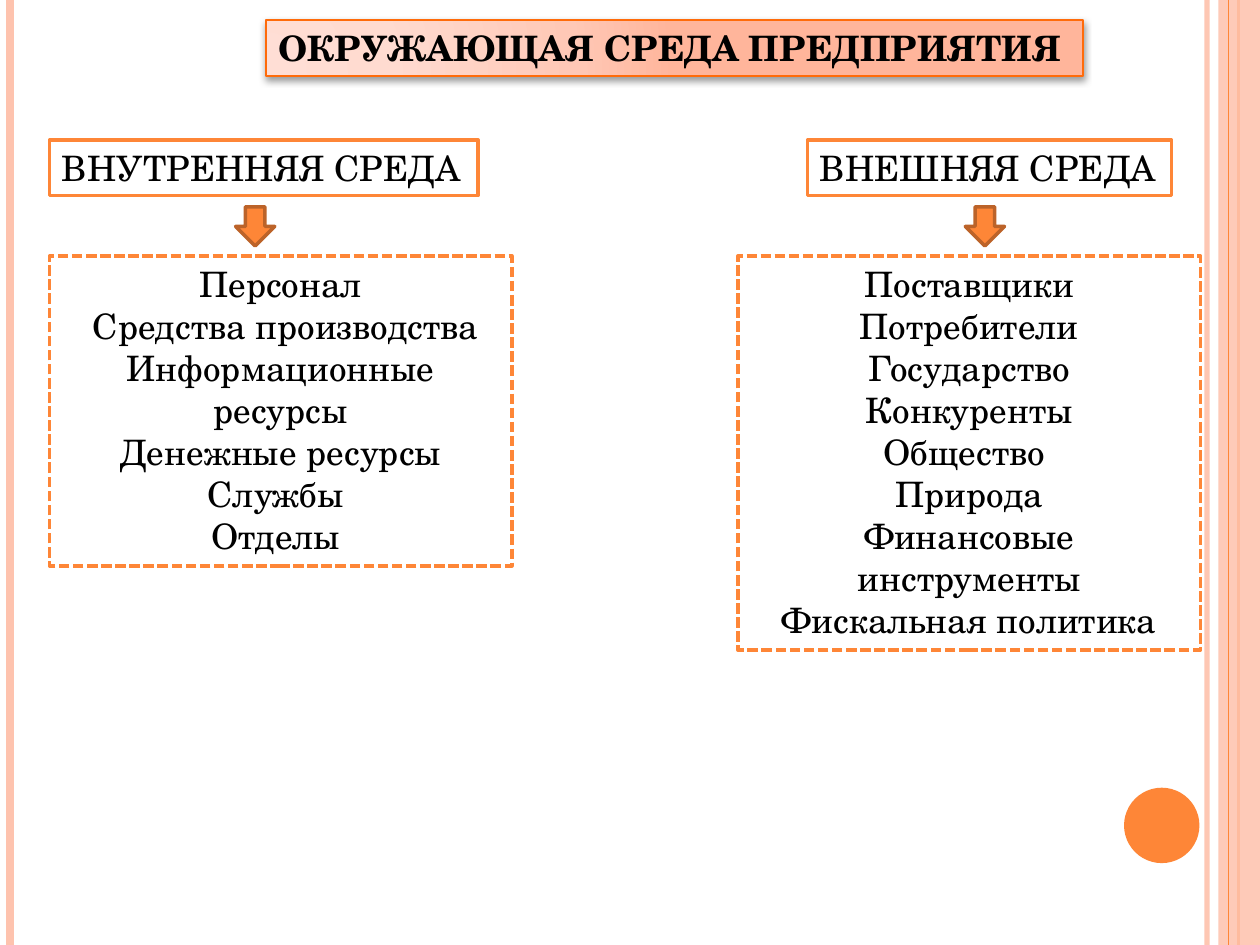
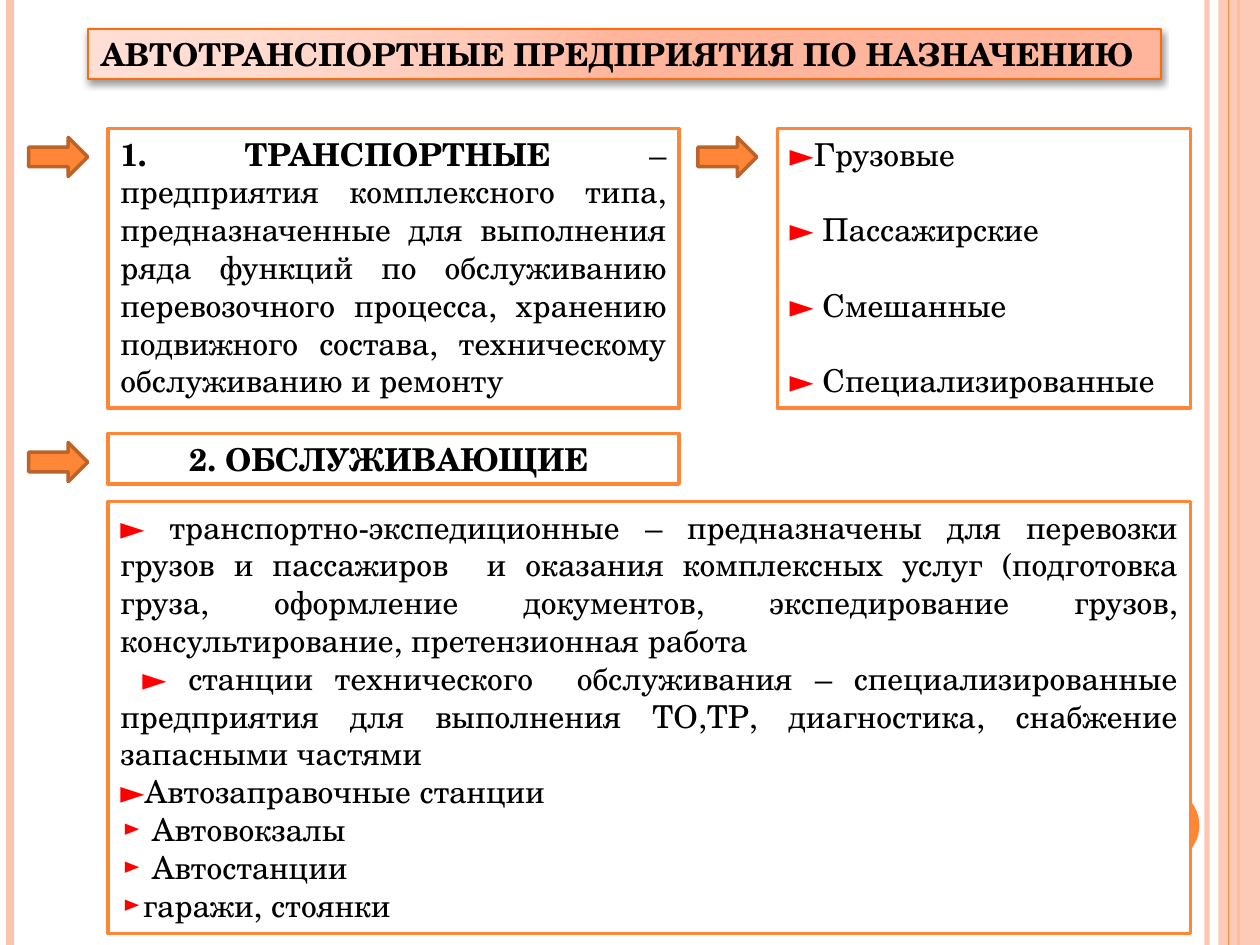
from dataclasses import dataclass

from lxml.etree import SubElement
from pptx import Presentation
from pptx.dml.color import RGBColor
from pptx.enum.dml import MSO_LINE
from pptx.enum.shapes import MSO_CONNECTOR, MSO_SHAPE
from pptx.enum.text import MSO_ANCHOR, MSO_AUTO_SIZE, PP_ALIGN
from pptx.oxml import parse_xml
from pptx.oxml.ns import nsdecls, qn
from pptx.util import Cm, Pt

SLIDE_WIDTH, SLIDE_HEIGHT = 25.4, 19.05


@dataclass(frozen=True)
class Theme:
    # Colours
    accent: str = "FE8637"
    accent_dark: str = "BC6329"
    band: str = "FEC3AE"
    title_line: str = "FF6B0A"
    title_stops: tuple = ((0, "FFDED5"), (30, "FFDBD0"), (75, "FFC8B6"), (100, "FFB59B"))
    paper: str = "FFFFFF"
    ink: str = "000000"
    marker: str = "FF0000"
    # Type
    font: str = "TeX Gyre Schola"
    marker_font: str = "Quicksand"
    large: int = 20
    normal: int = 18
    # Line widths
    outline: float = 2


def rgb(value):
    return RGBColor.from_string(value)


def set_opacity(properties, percent):
    for colour in properties.iter(qn("a:srgbClr")):
        SubElement(colour, qn("a:alpha"), val=str(percent * 1000))


class Deck:
    """Holds the theme and the current slide."""

    def __init__(self, theme):
        self.theme = theme
        self.slide = None
        self.presentation = Presentation()
        self.presentation.slide_width = Cm(SLIDE_WIDTH)
        self.presentation.slide_height = Cm(SLIDE_HEIGHT)

    # Slide with its side bands and title
    def new_slide(self, title, place, size):
        layout = self.presentation.slide_layouts.get_by_name("Title Only")
        self.slide = self.presentation.slides.add_slide(layout)
        self.side_bands()
        self.title(title, place, size)

    def side_bands(self):
        theme = self.theme
        inner_rail = self.rail(24.33, theme.band, 3)
        set_opacity(inner_rail._element.spPr, 93)
        self.rail(0.2, theme.band, 4.5)
        self.rail(24.97, theme.accent, 1.5)
        band = self.shape(MSO_SHAPE.RECTANGLE, (24.56, 0, 0.84, SLIDE_HEIGHT), theme.band)
        set_opacity(band._element.spPr, 87)
        self.rail(24.77, theme.accent, 0.75)
        self.shape(MSO_SHAPE.OVAL, (22.66, 15.88, 1.52, 1.52), theme.accent)

    def rail(self, x, colour, width):
        rail = self.slide.shapes.add_connector(
            MSO_CONNECTOR.STRAIGHT, Cm(x), 0, Cm(x), Cm(SLIDE_HEIGHT))
        rail.line.color.rgb = rgb(colour)
        rail.line.width = Pt(width)
        SubElement(rail._element.spPr, qn("a:effectLst"))
        return rail

    def title(self, text, place, size):
        theme, title = self.theme, self.slide.shapes.title
        for side, length in zip(("left", "top", "width", "height"), place):
            setattr(title, side, Cm(length))
        stops = "".join(
            f'<a:gs pos="{position * 1000}"><a:srgbClr val="{colour}"/></a:gs>'
            for position, colour in theme.title_stops)
        properties = title._element.spPr
        properties.append(parse_xml(
            f'<a:gradFill {nsdecls("a")} rotWithShape="1"><a:gsLst>{stops}</a:gsLst>'
            '<a:path path="circle"><a:fillToRect l="5000" t="100000" r="120000" b="10000"/>'
            '</a:path></a:gradFill>'))
        title.line.color.rgb = rgb(theme.title_line)
        title.line.width = Pt(1)
        properties.append(parse_xml(
            f'<a:effectLst {nsdecls("a")}><a:outerShdw blurRad="50800" dist="25400" '
            f'dir="5400000" rotWithShape="0"><a:srgbClr val="{theme.ink}">'
            '<a:alpha val="40000"/></a:srgbClr></a:outerShdw></a:effectLst>'))
        self.fill_text(title, [[(text, {"bold": True})]], size, PP_ALIGN.LEFT, wrap=False)

    # Shapes
    def shape(self, preset, place, fill, line=None):
        shape = self.slide.shapes.add_shape(preset, *map(Cm, place))
        shape.shadow.inherit = False
        shape.fill.solid()
        shape.fill.fore_color.rgb = rgb(fill)
        if line:
            shape.line.color.rgb = rgb(line)
            shape.line.width = Pt(self.theme.outline)
        else:
            shape.line.fill.background()
        return shape

    def arrow(self, preset, place):
        self.shape(preset, place, self.theme.accent, self.theme.accent_dark)

    def box(self, paragraphs, place, size, align, dashed=False, wrap=True, gap=0):
        box = self.shape(MSO_SHAPE.RECTANGLE, place, self.theme.paper, self.theme.accent)
        if dashed:
            box.line.dash_style = MSO_LINE.SQUARE_DOT
        self.fill_text(box, paragraphs, size, align, wrap, gap)

    # Text: each paragraph is a list of (text, format) runs
    def fill_text(self, shape, paragraphs, size, align, wrap=True, gap=0):
        frame = shape.text_frame
        frame_format = {"word_wrap": wrap, "auto_size": MSO_AUTO_SIZE.NONE,
                        "vertical_anchor": MSO_ANCHOR.TOP}
        for name, value in frame_format.items():
            setattr(frame, name, value)
        for index, runs in enumerate(paragraphs):
            paragraph = frame.add_paragraph() if index else frame.paragraphs[0]
            paragraph.alignment = align
            if index:
                paragraph.space_before = Pt(gap)
            for text, changes in runs:
                run = paragraph.add_run()
                run.text = text
                font_format = {"name": self.theme.font, "size": Pt(size),
                               "bold": False, "color": self.theme.ink} | changes
                run.font.color.rgb = rgb(font_format.pop("color"))
                for name, value in font_format.items():
                    setattr(run.font, name, value)

    def marked(self, marker, text, font=None):
        marker_format = {"color": self.theme.marker, "name": font or self.theme.marker_font}
        return [(marker, marker_format), (text, {})]


def environment_slide(deck):
    size = deck.theme.large
    deck.new_slide("ОКРУЖАЮЩАЯ СРЕДА ПРЕДПРИЯТИЯ", (5.36, 0.41, 16.48, 1.12), size)
    # Heading, its left and width; arrow left; factors, their left and height
    environments = [
        ("ВНУТРЕННЯЯ СРЕДА", 1, 8.64, 4.75,
         ["Персонал", " Средства производства Информационные ресурсы",
          "Денежные ресурсы", "Службы ", "Отделы "], 1, 6.25),
        ("ВНЕШНЯЯ СРЕДА", 16.28, 7.34, 19.46,
         ["Поставщики", "Потребители", " Государство ", "Конкуренты", "Общество ",
          "Природа", "Финансовые инструменты Фискальная политика"], 14.88, 7.95),
    ]
    for heading, left, width, arrow_left, factors, factors_left, height in environments:
        deck.box([[(heading, {})]], (left, 2.82, width, 1.12), size,
                 PP_ALIGN.LEFT, wrap=False)
        deck.arrow(MSO_SHAPE.DOWN_ARROW, (arrow_left, 4.17, 0.79, 0.79))
        deck.box([[(factor, {})] for factor in factors],
                 (factors_left, 5.16, 9.32, height), size, PP_ALIGN.CENTER, dashed=True)


def purpose_slide(deck):
    size, bold = deck.theme.normal, {"bold": True}
    deck.new_slide("АВТОТРАНСПОРТНЫЕ ПРЕДПРИЯТИЯ ПО НАЗНАЧЕНИЮ",
                   (1.78, 0.58, 21.62, 1.02), size)
    left, width, kinds_left, right = 2.18, 11.51, 15.67, 24
    transport_top, service_top = 2.59, 8.74

    # Arrows stand just before the boxes they point to
    for box_left, box_top in ((left, transport_top), (kinds_left, transport_top),
                              (left, service_top)):
        deck.arrow(MSO_SHAPE.RIGHT_ARROW, (box_left - 1.6, box_top + 0.18, 1.19, 0.79))

    # Transport enterprises and their kinds
    definition = (
        "– предприятия комплексного типа, предназначенные для выполнения ряда функций "
        "по обслуживанию перевозочного процесса, хранению подвижного состава, "
        "техническому обслуживанию и ремонту ")
    deck.box([[("1. ТРАНСПОРТНЫЕ ", bold), (definition, {})]],
             (left, transport_top, width, 5.64), size, PP_ALIGN.JUSTIFY)
    kinds = [("►", "Грузовые"), ("► ", "Пассажирские"), ("► ", "Смешанные"),
             ("► ", "Специализированные")]
    deck.box([deck.marked(*kind) for kind in kinds],
             (kinds_left, transport_top, right - kinds_left, 5.64), size,
             PP_ALIGN.LEFT, gap=size * 1.2)

    # Service enterprises
    deck.box([[("2. ОБСЛУЖИВАЮЩИЕ ", bold)]], (left, service_top, width, 1.02),
             size, PP_ALIGN.CENTER)
    font = deck.theme.font
    services = [
        ("► ", "транспортно-экспедиционные – предназначены для перевозки грузов и "
               "пассажиров  и оказания комплексных услуг (подготовка груза, оформление "
               "документов, экспедирование грузов, консультирование, претензионная работа "),
        (" ► ", "станции технического  обслуживания – специализированные предприятия для "
                "выполнения ТО,ТР, диагностика, снабжение запасными частями"),
        ("►", "Автозаправочные станции"),
        ("►", " Автовокзалы", font),
        ("►", " Автостанции ", font),
        ("►", "гаражи, стоянки ", font),
    ]
    deck.box([deck.marked(*service) for service in services],
             (left, 10.11, right - left, 8.71), size, PP_ALIGN.JUSTIFY)


def main():
    deck = Deck(Theme())
    environment_slide(deck)
    purpose_slide(deck)
    deck.presentation.save("out.pptx")


if __name__ == "__main__":
    main()
